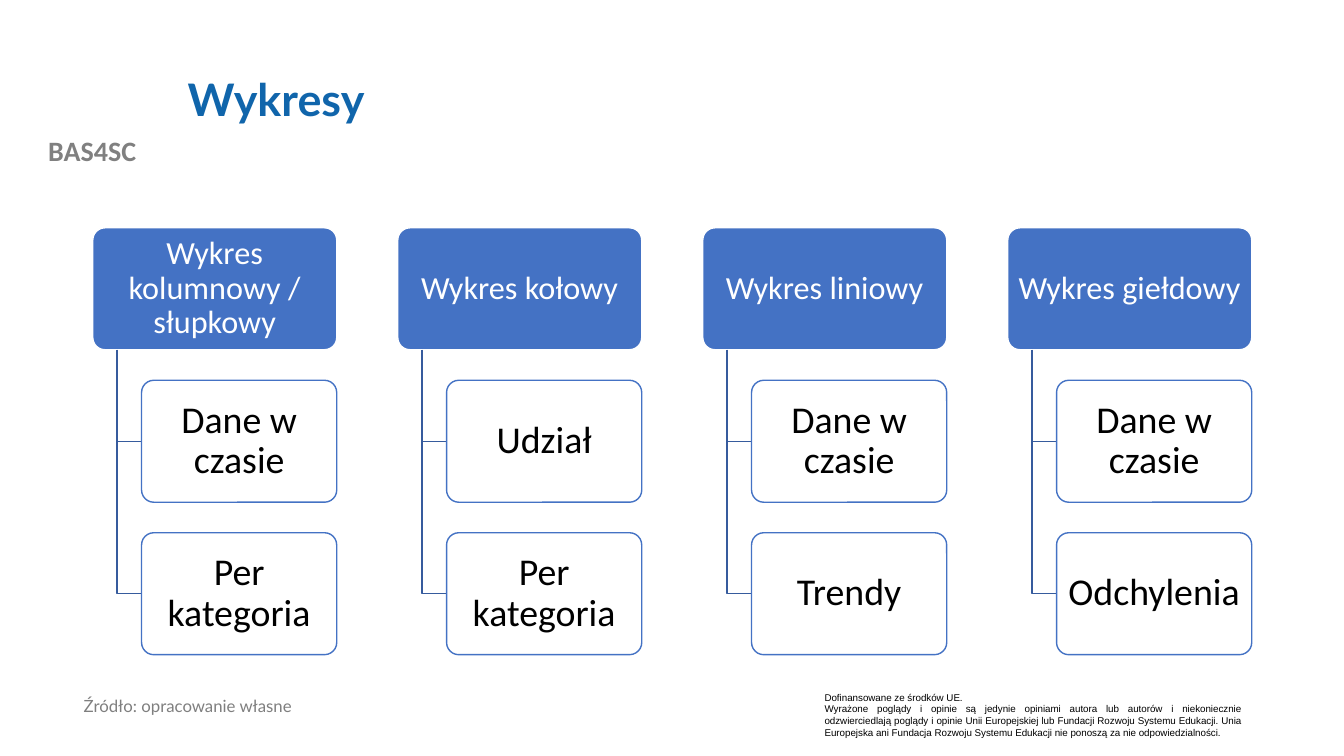
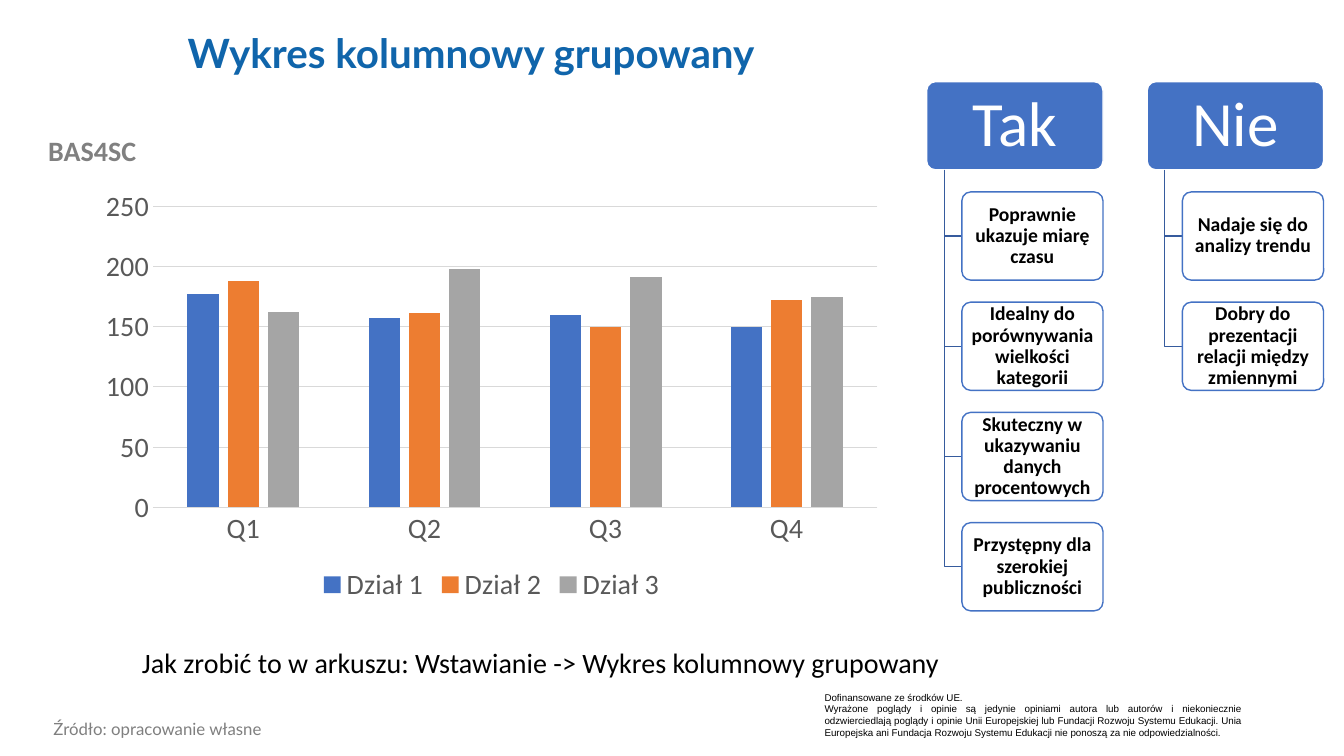
from dataclasses import dataclass

from lxml import etree
from pptx import Presentation
from pptx import util as u
from pptx.chart.data import CategoryChartData
from pptx.dml.color import RGBColor
from pptx.enum import chart as ch
from pptx.enum import shapes, text
from pptx.oxml.ns import qn

SCALE = 9144
BLUE, WIRE, WHITE, BLACK = "4472C4", "365B9D", "FFFFFF", "000000"
TITLE, GRAY, NOTE, AXIS, GRID = "1065AB", "808080", "7F7F7F", "595959", "D9D9D9"
LEFT, MID, JUST = text.PP_ALIGN.LEFT, text.PP_ALIGN.CENTER, text.PP_ALIGN.JUSTIFY
TOP, CORE = text.MSO_ANCHOR.TOP, text.MSO_ANCHOR.MIDDLE
NOFIT, GROW = text.MSO_AUTO_SIZE.NONE, text.MSO_AUTO_SIZE.SHAPE_TO_FIT_TEXT
LEGAL = (
    "Dofinansowane ze środków UE.",
    "Wyrażone poglądy i opinie są jedynie opiniami autora lub autorów i niekoniecznie "
    "odzwierciedlają poglądy i opinie Unii Europejskiej lub Fundacji Rozwoju Systemu Edukacji. "
    "Unia Europejska ani Fundacja Rozwoju Systemu Edukacji nie ponoszą za nie odpowiedzialności.",
)


@dataclass(frozen=True)
class Box:
    x: float
    y: float
    w: float
    h: float

    def emu(self) -> list[u.Emu]:
        return [px(v) for v in (self.x, self.y, self.w, self.h)]


@dataclass(frozen=True)
class Style:
    size: int
    pad: tuple[int, int]
    bold: bool = False


@dataclass(frozen=True)
class Branch:
    head: str
    leaves: tuple[str, ...]


@dataclass(frozen=True)
class Tree:
    x: int
    y: int
    w: int
    head: Style
    leaf: Style
    limbs: tuple[Branch, ...]


@dataclass(frozen=True)
class Series:
    name: str
    vals: tuple[int, ...]
    color: str


KINDS = Tree(92, 226, 242, Style(23, (5, 3)), Style(27, (6, 4)), (
    Branch("Wykres kolumnowy / słupkowy", ("Dane w czasie", "Per kategoria")),
    Branch("Wykres kołowy", ("Udział", "Per kategoria")),
    Branch("Wykres liniowy", ("Dane w czasie", "Trendy")),
    Branch("Wykres giełdowy", ("Dane w czasie", "Odchylenia")),
))
USES = Tree(919, 81, 175, Style(45, (9, 6)), Style(14, (3, 2), True), (
    Branch("Tak", ("Poprawnie ukazuje miarę czasu",
                   "Idealny do porównywania wielkości kategorii",
                   "Skuteczny w ukazywaniu danych procentowych",
                   "Przystępny dla szerokiej publiczności")),
    Branch("Nie", ("Nadaje się do analizy trendu",
                   "Dobry do prezentacji relacji między zmiennymi")),
))
QUARTERS = ("Q1", "Q2", "Q3", "Q4")
UNITS = (
    Series("Dział 1", (177, 157, 160, 150), BLUE),
    Series("Dział 2", (188, 161, 150, 172), "ED7D31"),
    Series("Dział 3", (162, 198, 191, 175), "A5A5A5"),
)


def px(n: float) -> u.Emu:
    return u.Emu(round(n * SCALE))


def rgb(code: str) -> RGBColor:
    return RGBColor.from_string(code)


def ink(font, size: float, color: str, face: str = "Calibri", bold: bool = False) -> None:
    font.size = u.Pt(size)
    font.name = face
    font.bold = bold
    font.color.rgb = rgb(color)


def put(frame, *lines: str, size: float, color: str = BLACK, face: str = "Calibri",
        bold: bool = False, align=LEFT, anchor=TOP, space: float = 1.0,
        after: float = 0, pad: tuple[int, int] = (10, 5), fit=NOFIT) -> None:
    frame.word_wrap = True
    frame.auto_size = fit
    frame.vertical_anchor = anchor
    frame.margin_left = frame.margin_right = px(pad[0])
    frame.margin_top = frame.margin_bottom = px(pad[1])
    for i, line in enumerate(lines):
        par = frame.paragraphs[0] if i == 0 else frame.add_paragraph()
        par.alignment = align
        par.line_spacing = space
        par.space_before = u.Pt(0)
        par.space_after = u.Pt(after)
        run = par.add_run()
        run.text = line
        ink(run.font, size, color, face, bold)


def label(slide, box: Box, *lines: str, **fmt) -> None:
    put(slide.shapes.add_textbox(*box.emu()).text_frame, *lines, fit=GROW, **fmt)


def place(shape, box: Box) -> None:
    shape.left, shape.top, shape.width, shape.height = box.emu()


def page(deck, title: str, size: float, top: int, note: Box):
    slide = deck.slides.add_slide(deck.slide_layouts[1])
    head, body = slide.placeholders
    place(head, Box(176, top, 1066, 110))
    put(head.text_frame, title, size=size, color=TITLE, face="Lato", bold=True,
        anchor=CORE, space=0.9)
    place(body, note)
    props = body.text_frame.paragraphs[0]._p.get_or_add_pPr()
    props.set("marL", "0")
    props.set("indent", "0")
    etree.SubElement(props, qn("a:buNone"))
    put(body.text_frame, "Źródło: opracowanie własne", size=12, color=NOTE,
        face="Lato", space=0.9)
    label(slide, Box(0, 128, 183, 44), "BAS4SC", size=20, color=GRAY, bold=True, align=MID)
    label(slide, Box(808, 681, 433, 57), *LEGAL, size=7, face="Arial", align=JUST)
    return slide


def card(slide, box: Box, words: str, style: Style, fill: str, edge: str, color: str) -> None:
    shape = slide.shapes.add_shape(shapes.MSO_SHAPE.ROUNDED_RECTANGLE, *box.emu())
    shape.adjustments[0] = 0.1
    shape.shadow.inherit = False
    shape.fill.solid()
    shape.fill.fore_color.rgb = rgb(fill)
    shape.line.color.rgb = rgb(edge)
    shape.line.width = u.Pt(1)
    put(shape.text_frame, words, size=style.size, color=color, bold=style.bold, align=MID,
        anchor=CORE, space=0.9, pad=style.pad)


def elbow(slide, x: float, y: float, across: float, down: float) -> None:
    line = slide.shapes.build_freeform(px(x), px(y))
    line.add_line_segments([(px(x), px(down)), (px(across), px(down))], close=False)
    shape = line.convert_to_shape()
    shape.shadow.inherit = False
    shape.fill.background()
    shape.line.color.rgb = rgb(WIRE)
    shape.line.width = u.Pt(1)


def grow(slide, tree: Tree) -> None:
    w, h = tree.w, tree.w / 2
    for col, limb in enumerate(tree.limbs):
        x = tree.x + col * (w + h / 2)
        card(slide, Box(x, tree.y, w, h), limb.head, tree.head, BLUE, WHITE, WHITE)
        for row, leaf in enumerate(limb.leaves, 1):
            box = Box(x + w * 0.2, tree.y + row * h * 1.25, w * 0.8, h)
            elbow(slide, x + w * 0.1, tree.y + h, box.x, box.y + h / 2)
            card(slide, box, leaf, tree.leaf, WHITE, BLUE, BLACK)


def columns(slide, box: Box) -> None:
    data = CategoryChartData()
    data.categories = QUARTERS
    for item in UNITS:
        data.add_series(item.name, item.vals)
    chart = slide.shapes.add_chart(ch.XL_CHART_TYPE.COLUMN_CLUSTERED, *box.emu(), data).chart
    ink(chart.font, 10, BLACK)
    chart.has_title = False
    chart.has_legend = True
    chart.legend.position = ch.XL_LEGEND_POSITION.BOTTOM
    chart.legend.include_in_layout = False
    ink(chart.legend.font, 20, AXIS)
    plot = chart.plots[0]
    plot.gap_width, plot.overlap, plot.vary_by_categories = 219, -27, False
    for bars, item in zip(plot.series, UNITS):
        bars.format.fill.solid()
        bars.format.fill.fore_color.rgb = rgb(item.color)
    cats, vals = chart.category_axis, chart.value_axis
    for axis in (cats, vals):
        axis.major_tick_mark = axis.minor_tick_mark = ch.XL_TICK_MARK.NONE
        ink(axis.tick_labels.font, 20, AXIS)
    vals.minimum_scale, vals.maximum_scale, vals.major_unit = 0, 250, 50
    vals.format.line.fill.background()
    for line in (cats.format.line, vals.major_gridlines.format.line):
        line.color.rgb = rgb(GRID)
        line.width = u.Pt(0.75)


def main() -> None:
    deck = Presentation()
    deck.slide_width, deck.slide_height = px(1333), px(750)
    grow(page(deck, "Wykresy", 32, 46, Box(73, 687, 501, 52)), KINDS)
    slide = page(deck, "Wykres kolumnowy grupowany", 28.8, 0, Box(43, 710, 501, 32))
    grow(slide, USES)
    label(slide, Box(131, 635, 825, 44),
          "Jak zrobić to w arkuszu: Wstawianie -> Wykres kolumnowy grupowany", size=20)
    columns(slide, Box(89, 179, 797, 424))
    deck.save("out.pptx")


if __name__ == "__main__":
    main()
